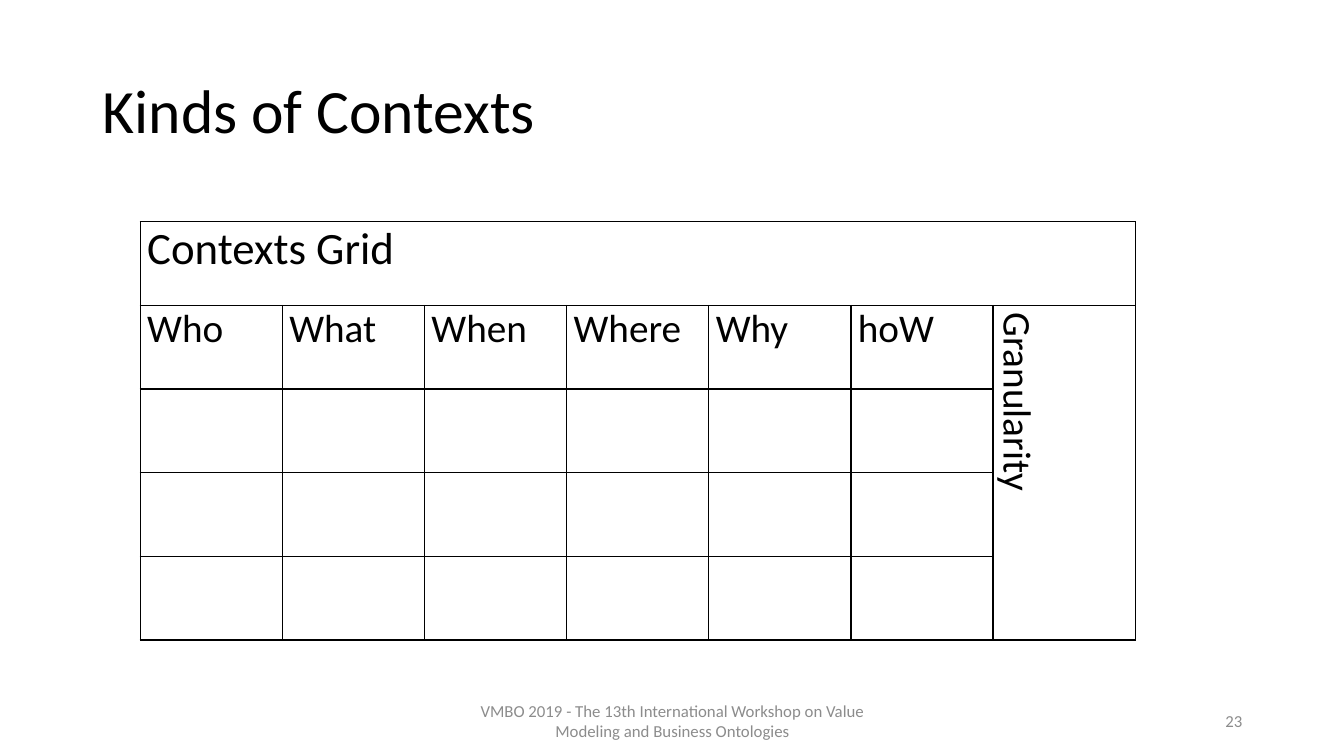
from lxml import etree
from pptx import Presentation
from pptx.dml.color import RGBColor
from pptx.enum.text import MSO_ANCHOR, PP_ALIGN
from pptx.oxml.ns import qn
from pptx.util import Pt

PX = 9144  # EMU per px, 100 px to the inch
BLACK = RGBColor(0x00, 0x00, 0x00)
GREY = RGBColor(0x8C, 0x8C, 0x8C)
LEFT, CENTER, RIGHT = PP_ALIGN.LEFT, PP_ALIGN.CENTER, PP_ALIGN.RIGHT
JUSTIFY = PP_ALIGN.JUSTIFY
MIDDLE = MSO_ANCHOR.MIDDLE

QUESTIONS = ["Who", "What", "When", "Where", "Why", "hoW"]
GRID_ROWS, GRID_COLS = 5, 7


class SlideBuilder:
    """Holds the style and the current slide."""

    font = "Calibri"
    border_width = Pt(1)
    cell_margin = 7

    def __init__(self, slide):
        self.slide = slide

    def add_words(self, frame, words, size, color, align):
        paragraph = frame.paragraphs[0]
        paragraph.alignment = align
        run = paragraph.add_run()
        run.text = words
        run.font.name = self.font
        run.font.size = Pt(size)
        run.font.color.rgb = color
        return paragraph

    def text(self, box, words, size, color=BLACK, align=LEFT):
        frame = self.slide.shapes.add_textbox(*(n * PX for n in box)).text_frame
        frame.word_wrap = True
        frame.vertical_anchor = MIDDLE
        return self.add_words(frame, words, size, color, align)

    def table(self, left, top, rows, cols, col_width, row_height):
        table = self.slide.shapes.add_table(
            rows, cols, left * PX, top * PX,
            cols * col_width * PX, rows * row_height * PX).table
        table.first_row = table.horz_banding = False
        for column in table.columns:
            column.width = col_width * PX
        for row in table.rows:
            row.height = row_height * PX
            for cell in row.cells:
                self.style_cell(cell)
        return table

    def style_cell(self, cell):
        cell.margin_left = cell.margin_right = self.cell_margin * PX
        cell.margin_top = cell.margin_bottom = 0
        properties = cell._tc.get_or_add_tcPr()
        for side in ("a:lnL", "a:lnR", "a:lnT", "a:lnB"):
            line = etree.SubElement(properties, qn(side), w=str(self.border_width))
            fill = etree.SubElement(line, qn("a:solidFill"))
            etree.SubElement(fill, qn("a:srgbClr"), val=str(BLACK))
        cell.fill.background()

    def cell_text(self, cell, words, size):
        self.add_words(cell.text_frame, words, size, BLACK, JUSTIFY)


def main():
    deck = Presentation()
    deck.slide_width, deck.slide_height = 1333 * PX, 750 * PX
    builder = SlideBuilder(deck.slides.add_slide(deck.slide_layouts[6]))

    # Title
    title = builder.text((92, 40, 1150, 145), "Kinds of Contexts", 44)
    title.line_spacing = 0.9

    # Footer and slide number
    builder.text((442, 695, 450, 40),
                 "VMBO 2019 - The 13th International Workshop on Value "
                 "Modeling and Business Ontologies", 12, GREY, CENTER)
    builder.text((942, 695, 300, 40), "23", 12, GREY, RIGHT)

    # Contexts grid: heading across the top, granularity down the right
    grid = builder.table(139, 220, GRID_ROWS, GRID_COLS, 141, 83)
    heading = grid.cell(0, 0)
    heading.merge(grid.cell(0, GRID_COLS - 1))
    builder.cell_text(heading, "Contexts Grid", 32)

    for col, question in enumerate(QUESTIONS):
        builder.cell_text(grid.cell(1, col), question, 28)

    granularity = grid.cell(1, GRID_COLS - 1)
    granularity.merge(grid.cell(GRID_ROWS - 1, GRID_COLS - 1))
    granularity._tc.get_or_add_tcPr().set("vert", "vert")
    builder.cell_text(granularity, "Granularity", 28)

    deck.save("out.pptx")


if __name__ == "__main__":
    main()
